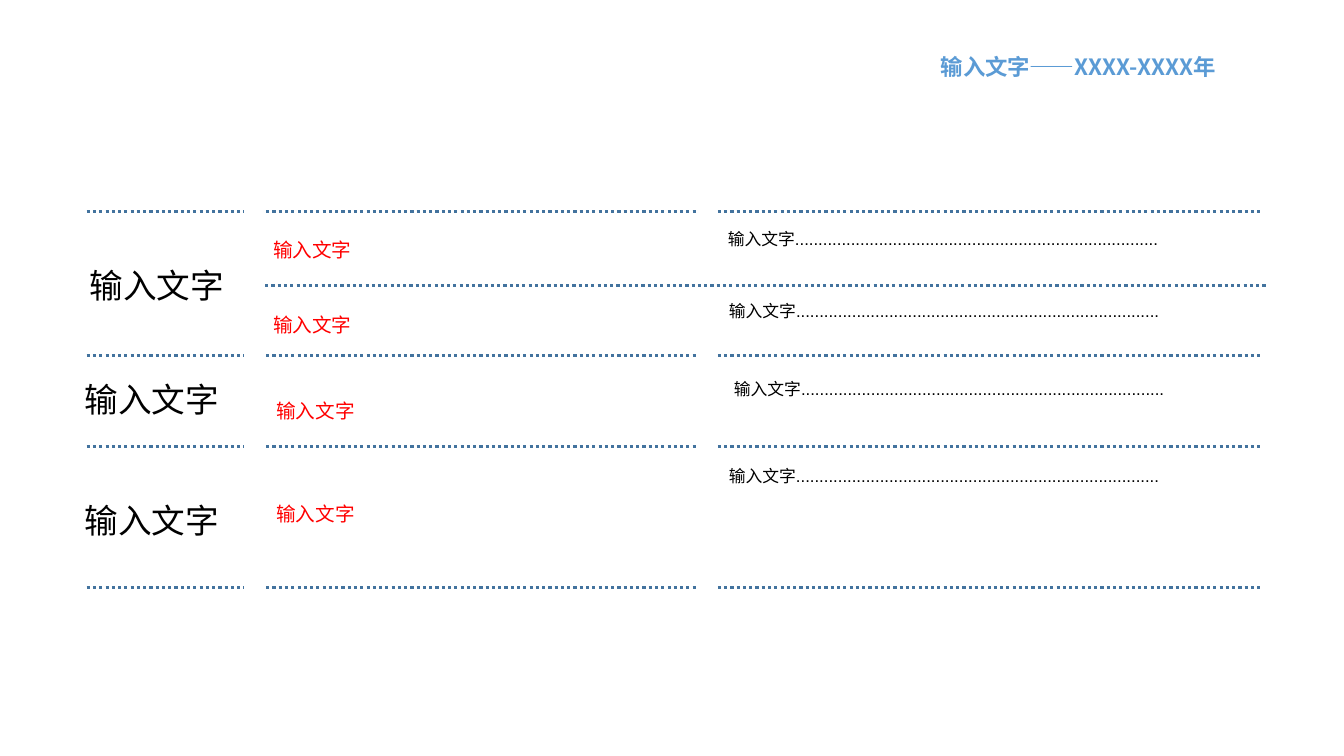
from lxml.etree import SubElement
from pptx import Presentation
from pptx.dml.color import RGBColor
from pptx.enum.dml import MSO_LINE
from pptx.enum.shapes import MSO_CONNECTOR
from pptx.enum.text import MSO_ANCHOR, MSO_AUTO_SIZE, PP_ALIGN
from pptx.oxml.ns import qn
from pptx.util import Inches, Pt

# Content: (left, top, width, height, font) in inches for each entry
HEADING = "输入文字——XXXX-XXXX年"
LABEL = "输入文字"
DETAIL = LABEL + "." * 78
LATIN, CJK, CJK_ALT = "Arial", "Noto Sans CJK SC", "Noto Sans CJK JP"

BLACK = RGBColor(0x00, 0x00, 0x00)
RED = RGBColor(0xFF, 0x00, 0x00)
SKY = RGBColor(0x5B, 0x9B, 0xD5)
STEEL = RGBColor(0x43, 0x73, 0x9E)

HEADING_PLACE = (9.23, 0.48, 3.13, 0.37)
# (text, size, colour, places with line spacing last)
TEXT_COLUMNS = [
    (LABEL, 24, BLACK, [
        (0.79, 2.58, 1.53, 0.5, LATIN, 1),
        (0.74, 3.71, 1.53, 0.5, LATIN, 1),
        (0.74, 4.91, 1.53, 0.5, CJK_ALT, 1),
    ]),
    (LABEL, 14, RED, [
        (2.61, 2.31, 0.98, 0.34, CJK, 1),
        (2.61, 3.06, 4.32, 0.34, CJK, 1),
        (2.64, 3.79, 0.98, 0.45, LATIN, 1.5),
        (2.64, 4.81, 0.98, 0.45, CJK, 1.5),
    ]),
    (DETAIL, 12, BLACK, [
        (7.12, 2.12, 5.44, 0.4, LATIN, 1.5),
        (7.13, 2.83, 4.65, 0.4, LATIN, 1.5),
        (7.18, 3.61, 5.38, 0.4, LATIN, 1.5),
        (7.13, 4.47, 5.4, 0.71, LATIN, 1.5),
    ]),
]

# Grid of dotted rules
COLUMN_SPANS = [(0.86, 2.42), (2.64, 6.9), (7.12, 12.53)]
ROW_EDGES = [2.1, 3.53, 4.43, 5.83]
SUBROW_RULE = (2.63, 12.56, 2.83)


def write(box, text, size, colour, font_name, spacing, wrap, bold=False):
    frame = box.text_frame
    frame.text = text
    frame.word_wrap = wrap
    frame.auto_size = MSO_AUTO_SIZE.SHAPE_TO_FIT_TEXT
    frame.vertical_anchor = MSO_ANCHOR.TOP
    para = frame.paragraphs[0]
    para.alignment = PP_ALIGN.LEFT
    para.line_spacing = spacing
    font = para.font
    font.size, font.bold, font.name = Pt(size), bold, font_name
    font.color.rgb = colour
    # East Asian face for the Chinese characters
    latin = next(para._p.iter(qn("a:latin")))
    east_face = CJK if font_name == LATIN else font_name
    latin.addnext(SubElement(latin.getparent(), qn("a:ea"), typeface=east_face))


def dotted_rule(page, left, right, top):
    rule = page.shapes.add_connector(
        MSO_CONNECTOR.STRAIGHT, Inches(left), Inches(top), Inches(right), Inches(top))
    rule.line.color.rgb = STEEL
    rule.line.width = Pt(2.25)
    rule.line.dash_style = MSO_LINE.ROUND_DOT
    SubElement(rule._element.spPr, qn("a:effectLst"))


def main():
    deck = Presentation()
    deck.slide_width, deck.slide_height = Inches(13.33), Inches(7.5)
    page = deck.slides.add_slide(deck.slide_layouts[5])

    # Heading
    title = page.shapes.title
    title.left, title.top, title.width, title.height = map(Inches, HEADING_PLACE)
    write(title, HEADING, 16, SKY, CJK, 1, wrap=False, bold=True)

    # Rules
    for left, right in COLUMN_SPANS:
        for edge in ROW_EDGES:
            dotted_rule(page, left, right, edge)
    dotted_rule(page, *SUBROW_RULE)

    # Text columns: narrow boxes stay on one line
    for text, size, colour, places in TEXT_COLUMNS:
        for *place, font_name, spacing in places:
            box = page.shapes.add_textbox(*map(Inches, place))
            write(box, text, size, colour, font_name, spacing, wrap=place[2] > 2)

    deck.save("out.pptx")


if __name__ == "__main__":
    main()
